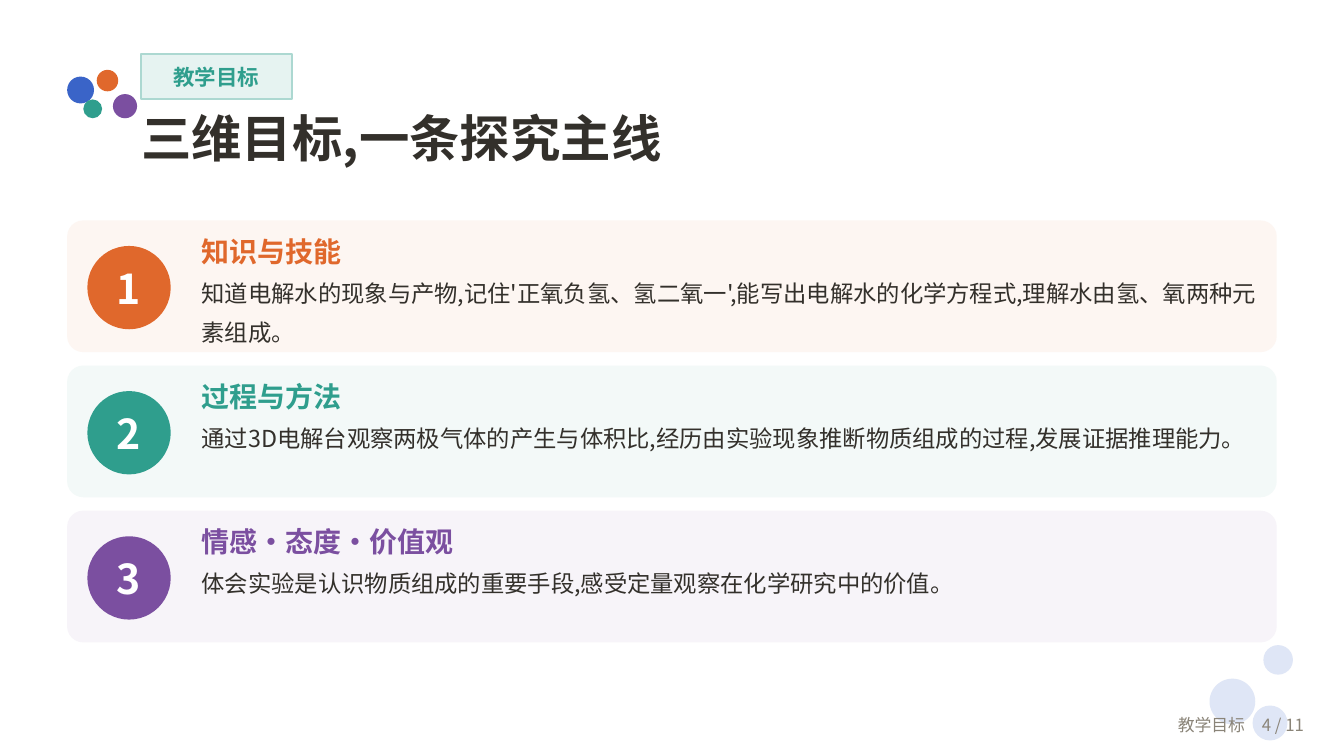
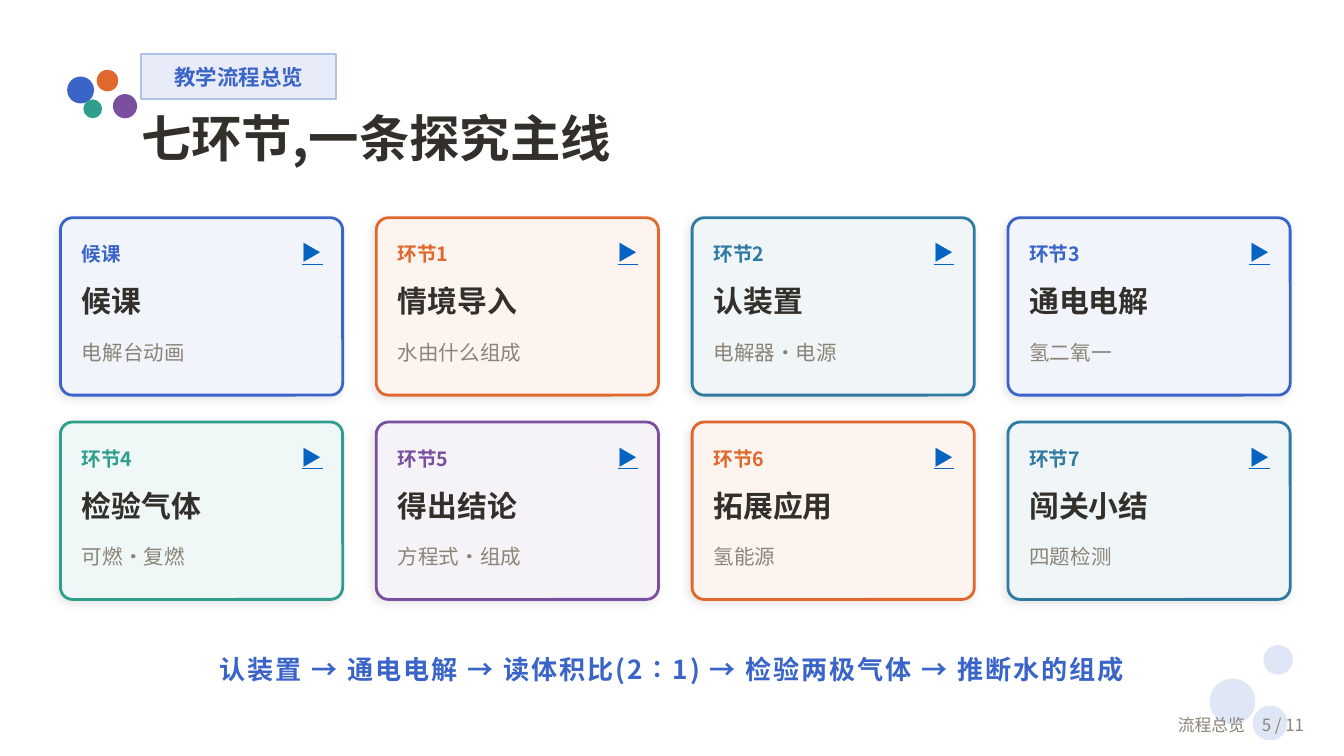
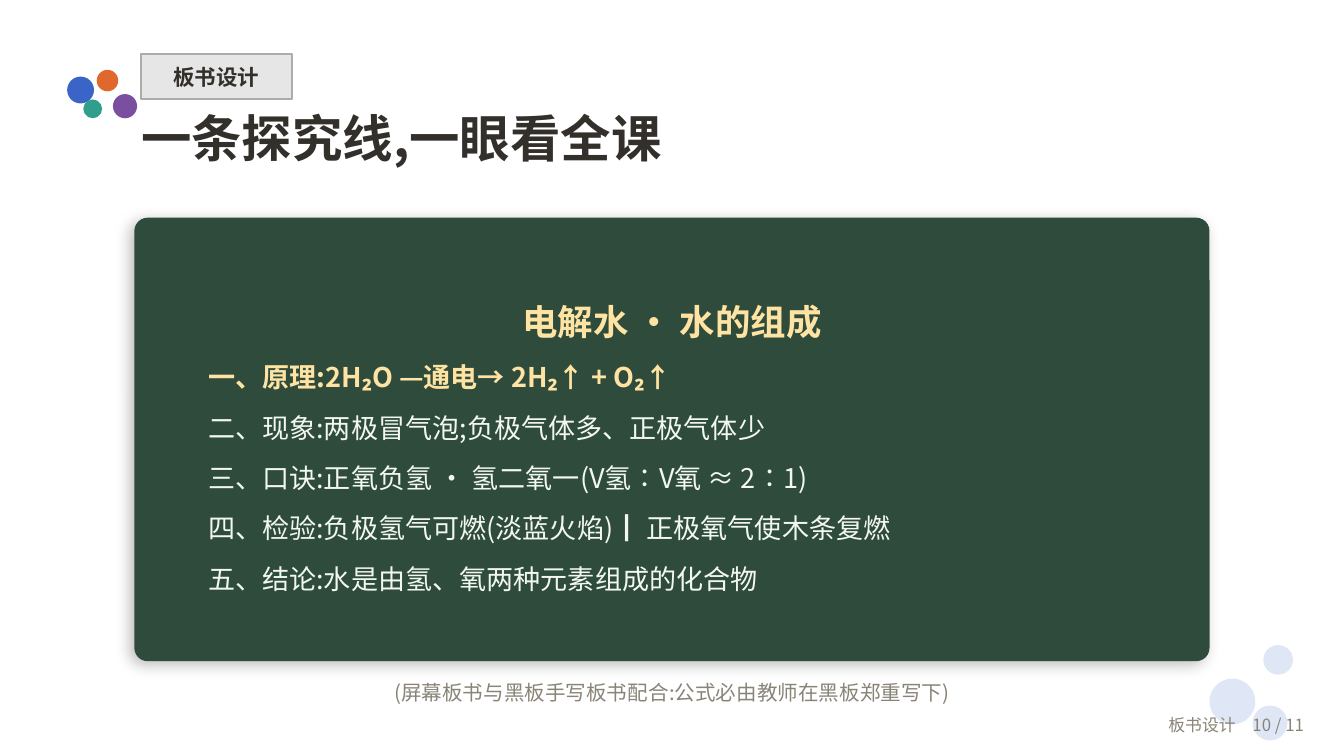
from lxml import etree
from pptx import Presentation
from pptx.dml.color import RGBColor
from pptx.enum.shapes import MSO_SHAPE
from pptx.enum.text import MSO_ANCHOR, PP_ALIGN
from pptx.oxml.ns import qn
from pptx.util import Pt

RECTANGLE, ROUNDED, OVAL = MSO_SHAPE.RECTANGLE, MSO_SHAPE.ROUNDED_RECTANGLE, MSO_SHAPE.OVAL
TOP, MIDDLE = MSO_ANCHOR.TOP, MSO_ANCHOR.MIDDLE
LEFT, CENTER, RIGHT = PP_ALIGN.LEFT, PP_ALIGN.CENTER, PP_ALIGN.RIGHT

FONT = "Noto Sans CJK SC"
PAGE_COUNT = 11
MARGIN = 36
NO_INSETS = (0, 0)
USUAL_INSETS = (7.2, 3.6)
COLORS = {
    "blue": "3A64C8", "orange": "E0682C", "green": "2F9E8D", "purple": "7B4FA0",
    "teal": "2F7AA0", "ink": "33302B", "gray": "8A8478", "white": "FFFFFF",
    "bubble": "DFE6F6", "play": "0563C1",
    "green tag": "E6F3F1", "green tag line": "ACD8D1",
    "blue tag": "E7ECF8", "blue tag line": "B0C1E9",
    "ink tag": "E7E6E6", "ink tag line": "ADACAA",
    "orange row": "FDF6F2", "green row": "F3F9F8", "purple row": "F7F4F9",
    "blue card": "F1F4FB", "orange card": "FDF4F0", "teal card": "F0F6F8",
    "green card": "F0F8F7", "purple card": "F6F3F8",
    "board": "2E4B3C", "chalk": "F2F7F0", "yellow chalk": "FFE3A3",
}

# Left, top, diameter, colour
DOTS = [
    (648, 363.6, 24.48, "bubble"), (676.8, 345.6, 15.84, "bubble"),
    (671.04, 378, 18.72, "bubble"),
    (36, 41.04, 14.4, "blue"), (51.84, 37.44, 11.52, "orange"),
    (44.64, 53.28, 10.08, "green"), (60.48, 50.4, 12.96, "purple"),
]
GOALS = [
    ("orange", "知识与技能",
     "知道电解水的现象与产物,记住'正氧负氢、氢二氧一',能写出电解水的化学方程式,理解水由氢、氧两种元素组成。"),
    ("green", "过程与方法",
     "通过3D电解台观察两极气体的产生与体积比,经历由实验现象推断物质组成的过程,发展证据推理能力。"),
    ("purple", "情感·态度·价值观",
     "体会实验是认识物质组成的重要手段,感受定量观察在化学研究中的价值。"),
]
STAGES = [
    ("blue", "候课", "候课", "电解台动画"),
    ("orange", "环节1", "情境导入", "水由什么组成"),
    ("teal", "环节2", "认装置", "电解器·电源"),
    ("blue", "环节3", "通电电解", "氢二氧一"),
    ("green", "环节4", "检验气体", "可燃·复燃"),
    ("purple", "环节5", "得出结论", "方程式·组成"),
    ("orange", "环节6", "拓展应用", "氢能源"),
    ("teal", "环节7", "闯关小结", "四题检测"),
]
SUMMARY = "认装置 → 通电电解 → 读体积比(2∶1) → 检验两极气体 → 推断水的组成"
BOARD_TITLE = "电解水 · 水的组成"
BOARD_FORMULA = "一、原理:2H₂O —通电→ 2H₂↑ + O₂↑"
BOARD_POINTS = [
    "二、现象:两极冒气泡;负极气体多、正极气体少",
    "三、口诀:正氧负氢 · 氢二氧一(V氢∶V氧 ≈ 2∶1)",
    "四、检验:负极氢气可燃(淡蓝火焰)┃ 正极氧气使木条复燃",
    "五、结论:水是由氢、氧两种元素组成的化合物",
]
BOARD_NOTE = "(屏幕板书与黑板手写板书配合:公式必由教师在黑板郑重写下)"


def rgb(color):
    return RGBColor.from_string(COLORS[color])


def points(box):
    return [Pt(length) for length in box]


def within(box, left, top, width, height):
    """Move a box given relative to the corner of another one onto the page."""
    return box[0] + left, box[1] + top, width, height


def add_figure(page, kind, box, fill, line=None, line_width=1, radius=None):
    figure = page.shapes.add_shape(kind, *points(box))
    figure.shadow.inherit = False
    figure.fill.solid()
    figure.fill.fore_color.rgb = rgb(fill)
    if line:
        figure.line.color.rgb = rgb(line)
        figure.line.width = Pt(line_width)
    else:
        figure.line.fill.background()
    if radius is not None:
        figure.adjustments[0] = radius
    return figure


def cast_shadow(figure, opacity, blur, distance):
    effects = figure._element.spPr.find(qn("a:effectLst"))
    shadow = etree.SubElement(effects, qn("a:outerShdw"), blurRad=str(Pt(blur)),
                              dist=str(Pt(distance)), dir="8100000",
                              algn="bl", rotWithShape="0")
    black = etree.SubElement(shadow, qn("a:srgbClr"), val="000000")
    etree.SubElement(black, qn("a:alpha"), val=str(opacity * 1000))


def format_span(span, size, color, bold=False):
    font = span.font
    font.name, font.size, font.bold = FONT, Pt(size), bold
    font.color.rgb = rgb(color)
    etree.SubElement(span._r.get_or_add_rPr(), qn("a:ea"), typeface=FONT)


def write(holder, lines, align=LEFT, anchor=MIDDLE, insets=NO_INSETS, spacing=None):
    """Fill a shape with lines, each given as text, size, colour and boldness."""
    frame = holder.text_frame
    frame.word_wrap = True
    frame.vertical_anchor = anchor
    frame.margin_left = frame.margin_right = Pt(insets[0])
    frame.margin_top = frame.margin_bottom = Pt(insets[1])
    frame.text = "\n".join(line[0] for line in lines)
    for para, (_, *style) in zip(frame.paragraphs, lines):
        para.alignment = align
        if spacing:
            para.line_spacing = Pt(spacing)
        format_span(para.runs[0], *style)


def add_text(page, box, lines, **layout):
    holder = page.shapes.add_textbox(*points(box))
    write(holder, lines, **layout)
    return holder.text_frame.paragraphs[0].runs[0]


def add_page(deck, tag, tag_width, accent, title):
    """Add a page with the shared dots, tag and title."""
    page = deck.slides.add_slide(deck.slide_layouts[6])
    for left, top, diameter, color in DOTS:
        add_figure(page, OVAL, (left, top, diameter, diameter), color)
    label = add_figure(page, RECTANGLE, (75.6, 28.8, tag_width, 24.48),
                       f"{accent} tag", f"{accent} tag line")
    write(label, [(tag, 11.5, accent, True)], align=CENTER)
    add_text(page, (75.6, 57.6, 604.8, 39.6), [(title, 27, "ink", True)], anchor=TOP)
    return page


def add_footer(page, section, number):
    add_text(page, (576, 377.28, 129.6, 21.6),
             [(f"{section}　{number} / {PAGE_COUNT}", 9, "gray")],
             align=RIGHT, insets=USUAL_INSETS)


def add_goal(page, box, number, accent, heading, detail):
    add_figure(page, ROUNDED, box, f"{accent} row", radius=0.122)
    badge = within(box, 10.8, 13.68, 44.64, 44.64)
    add_figure(page, OVAL, badge, accent)
    add_text(page, badge, [(str(number), 22, "white", True)], align=CENTER)
    add_text(page, within(box, 72, 4.32, 565.2, 68.4),
             [(heading, 15, accent, True), (detail, 12.5, "ink")],
             anchor=TOP, spacing=21)


def add_stage(page, box, accent, label, heading, detail):
    card = add_figure(page, ROUNDED, box, f"{accent} card", accent, 1.5, 0.068)
    cast_shadow(card, opacity=10, blur=5, distance=2)
    add_text(page, within(box, 11.52, 8.64, 86.4, 21.6), [(label, 10.5, accent, True)])
    play = add_text(page, within(box, 111.6, 7.2, 28.8, 23.04),
                    [("▶", 11, "play")], align=RIGHT)
    play.font.underline = True
    add_text(page, within(box, 11.52, 30.24, 129.6, 28.8), [(heading, 16, "ink", True)])
    add_text(page, within(box, 11.52, 61.2, 129.6, 21.6), [(detail, 11, "gray")])


def add_blackboard(page, box):
    board = add_figure(page, ROUNDED, box, "board", radius=0.03)
    cast_shadow(board, opacity=25, blur=8, distance=3)
    lines = [(BOARD_TITLE, 19, "yellow chalk", True),
             (BOARD_FORMULA, 14.5, "yellow chalk", True)]
    lines += [(point, 14.5, "chalk") for point in BOARD_POINTS]
    heading = add_text(page, within(box, 32.4, 16.56, 511.2, 208.8), lines,
                       insets=USUAL_INSETS, spacing=27)
    heading._r.getparent().get_or_add_pPr().set("algn", "ctr")


def build_goals(deck):
    page = add_page(deck, "教学目标", 80.64, "green", "三维目标,一条探究主线")
    height, gap = 70.56, 7.2
    for index, goal in enumerate(GOALS):
        box = (MARGIN, 118.08 + index * (height + gap), 648, height)
        add_goal(page, box, index + 1, *goal)
    add_footer(page, "教学目标", 4)


def build_stages(deck):
    page = add_page(deck, "教学流程总览", 104.4, "blue", "七环节,一条探究主线")
    columns, width, height = 4, 151.2, 95.04
    for index, stage in enumerate(STAGES):
        row, column = divmod(index, columns)
        box = (32.4 + column * (width + 18), 116.64 + row * (height + 14.4), width, height)
        add_stage(page, box, *stage)
    summary = add_text(page, (MARGIN, 344.16, 648, 28.8), [(SUMMARY, 14, "blue", True)],
                       align=CENTER, insets=USUAL_INSETS)
    summary._r.get_or_add_rPr().set("spc", "100")
    add_footer(page, "流程总览", 5)


def build_board(deck):
    page = add_page(deck, "板书设计", 80.64, "ink", "一条探究线,一眼看全课")
    add_blackboard(page, (72, 116.64, 576, 237.6))
    add_text(page, (72, 360, 576, 21.6), [(BOARD_NOTE, 11, "gray")],
             align=CENTER, insets=USUAL_INSETS)
    add_footer(page, "板书设计", 10)


def main():
    deck = Presentation()
    deck.slide_width, deck.slide_height = Pt(720), Pt(405)
    build_goals(deck)
    build_stages(deck)
    build_board(deck)
    deck.save("out.pptx")


if __name__ == "__main__":
    main()
